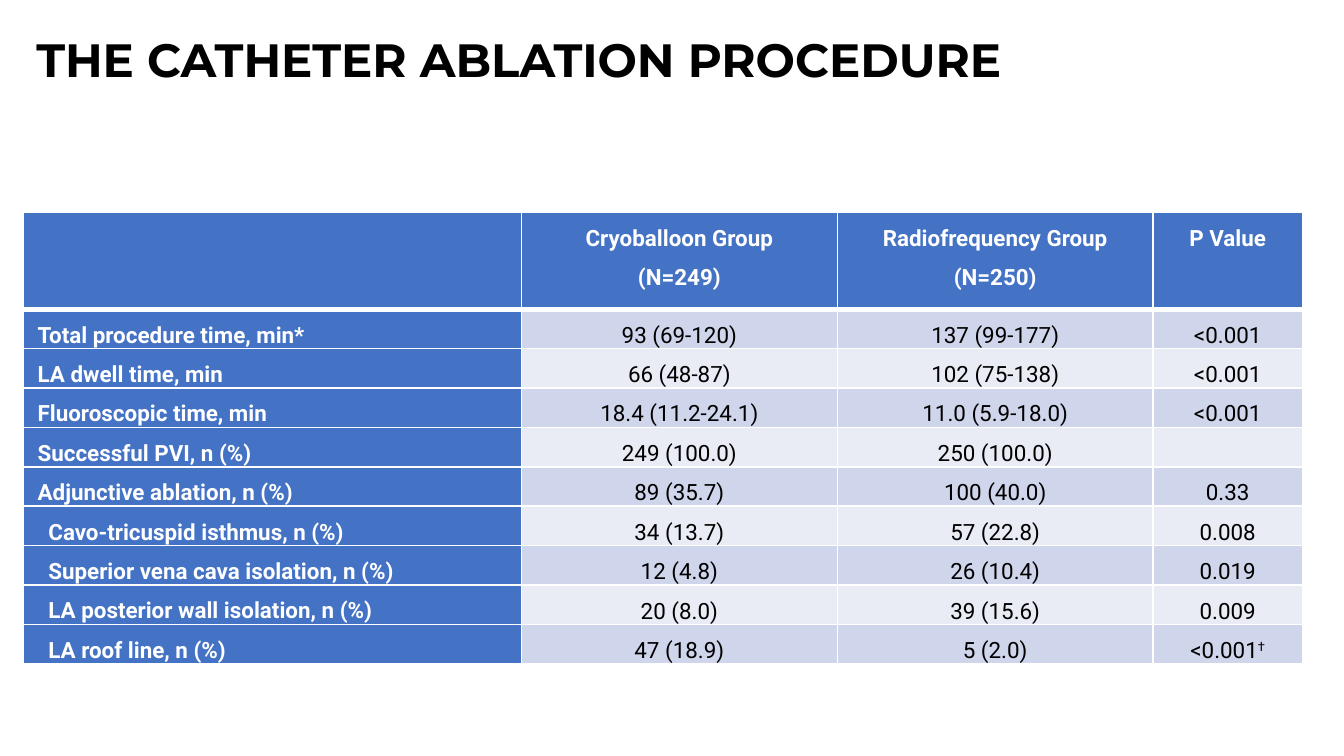
from lxml import etree
from pptx import Presentation
from pptx.dml.color import RGBColor
from pptx.enum.text import MSO_ANCHOR, MSO_AUTO_SIZE, PP_ALIGN
from pptx.oxml.ns import qn
from pptx.util import Inches, Pt

TOP, BOTTOM = MSO_ANCHOR.TOP, MSO_ANCHOR.BOTTOM
LEFT, CENTER = PP_ALIGN.LEFT, PP_ALIGN.CENTER
NO_AUTOFIT = MSO_AUTO_SIZE.NONE
WHITE = RGBColor(0xFF, 0xFF, 0xFF)
BLACK = RGBColor(0x00, 0x00, 0x00)
BLUE = RGBColor(0x44, 0x72, 0xC4)
BANDS = [RGBColor(0xE9, 0xEB, 0xF5), RGBColor(0xCF, 0xD5, 0xEA)]

COLUMNS = [3.71, 2.35, 2.35, 1.11]
ROWS = [0.72, 0.25, 0.25, 0.28] + [0.25] * 6
MARGIN_X = 0.17
INSET = 0.07
LABEL_INDENT = 0.11
SUBLABEL_INDENT = 0.19
SUBLABELS_FROM = 6

RESULTS = [
    ["", "Cryoballoon Group\n(N=249)", "Radiofrequency Group\n(N=250)", "P Value"],
    ["Total procedure time, min*", "93 (69-120)", "137 (99-177)", "<0.001"],
    ["LA dwell time, min", "66 (48-87)", "102 (75-138)", "<0.001"],
    ["Fluoroscopic time, min", "18.4 (11.2-24.1)", "11.0 (5.9-18.0)", "<0.001"],
    ["Successful PVI, n (%)", "249 (100.0)", "250 (100.0)", ""],
    ["Adjunctive ablation, n (%)", "89 (35.7)", "100 (40.0)", "0.33"],
    ["Cavo-tricuspid isthmus, n (%)", "34 (13.7)", "57 (22.8)", "0.008"],
    ["Superior vena cava isolation, n (%)", "12 (4.8)", "26 (10.4)", "0.019"],
    ["LA posterior wall isolation, n (%)", "20 (8.0)", "39 (15.6)", "0.009"],
    ["LA roof line, n (%)", "47 (18.9)", "5 (2.0)", "<0.001†"],
]


def apply(target, values):
    for name, value in values.items():
        setattr(target, name, value)


def add_borders(cell, widths):
    for side, width in widths.items():
        line = etree.SubElement(cell._tc.get_or_add_tcPr(), qn(f"a:ln{side}"), w=str(Pt(width)))
        fill = etree.SubElement(line, qn("a:solidFill"))
        etree.SubElement(fill, qn("a:srgbClr"), val=str(WHITE))


prs = Presentation()
prs.slide_width = Inches(10)
prs.slide_height = prs.slide_width * 9 // 16
slide = prs.slides.add_slide(prs.slide_layouts[5])

title = slide.shapes.title
apply(title, {"left": Inches(MARGIN_X), "top": Inches(0.18),
              "width": Inches(9.04), "height": Inches(0.59)})
title.text_frame.text = "THE CATHETER ABLATION PROCEDURE"
apply(title.text_frame, {"word_wrap": True, "auto_size": NO_AUTOFIT, "vertical_anchor": TOP})
heading = title.text_frame.paragraphs[0]
heading.alignment = LEFT
apply(heading.runs[0].font, {"name": "Montserrat", "size": Pt(25), "bold": True})
heading.runs[0].font.color.rgb = BLACK

results = slide.shapes.add_table(
    len(ROWS), len(COLUMNS), Inches(MARGIN_X), Inches(1.58),
    Inches(sum(COLUMNS)), Inches(sum(ROWS))).table
for column, width in zip(results.columns, COLUMNS):
    column.width = Inches(width)
for row, height in zip(results.rows, ROWS):
    row.height = Inches(height)

for r, record in enumerate(RESULTS):
    for c, wording in enumerate(record):
        cell = results.cell(r, c)
        is_header, is_label = r == 0, c == 0
        is_blue = is_header or is_label
        indent = INSET
        if is_label:
            indent = SUBLABEL_INDENT if r >= SUBLABELS_FROM else LABEL_INDENT
        apply(cell, {"margin_left": Inches(indent), "margin_right": Inches(INSET),
                     "margin_top": 0, "margin_bottom": 0,
                     "vertical_anchor": TOP if is_blue else BOTTOM})
        add_borders(cell, {"L": 1, "R": 1, "T": 3 if r == 1 else 1, "B": 3 if is_header else 1})
        cell.fill.solid()
        cell.fill.fore_color.rgb = BLUE if is_blue else BANDS[r % 2]

        value, dagger, _ = wording.partition("†")
        cell.text_frame.text = value
        if dagger:
            mark = cell.text_frame.paragraphs[0].add_run()
            mark.text = dagger
            mark._r.get_or_add_rPr().set("baseline", "30000")
        for paragraph in cell.text_frame.paragraphs:
            apply(paragraph, {"alignment": LEFT if is_label else CENTER, "line_spacing": 1.5})
            for run in paragraph.runs:
                apply(run.font, {"name": "Roboto", "size": Pt(12), "bold": is_blue})
                run.font.color.rgb = WHITE if is_blue else BLACK
            if not paragraph.runs:
                etree.SubElement(paragraph._p, qn("a:endParaRPr"), sz="1200")

prs.save("out.pptx")
